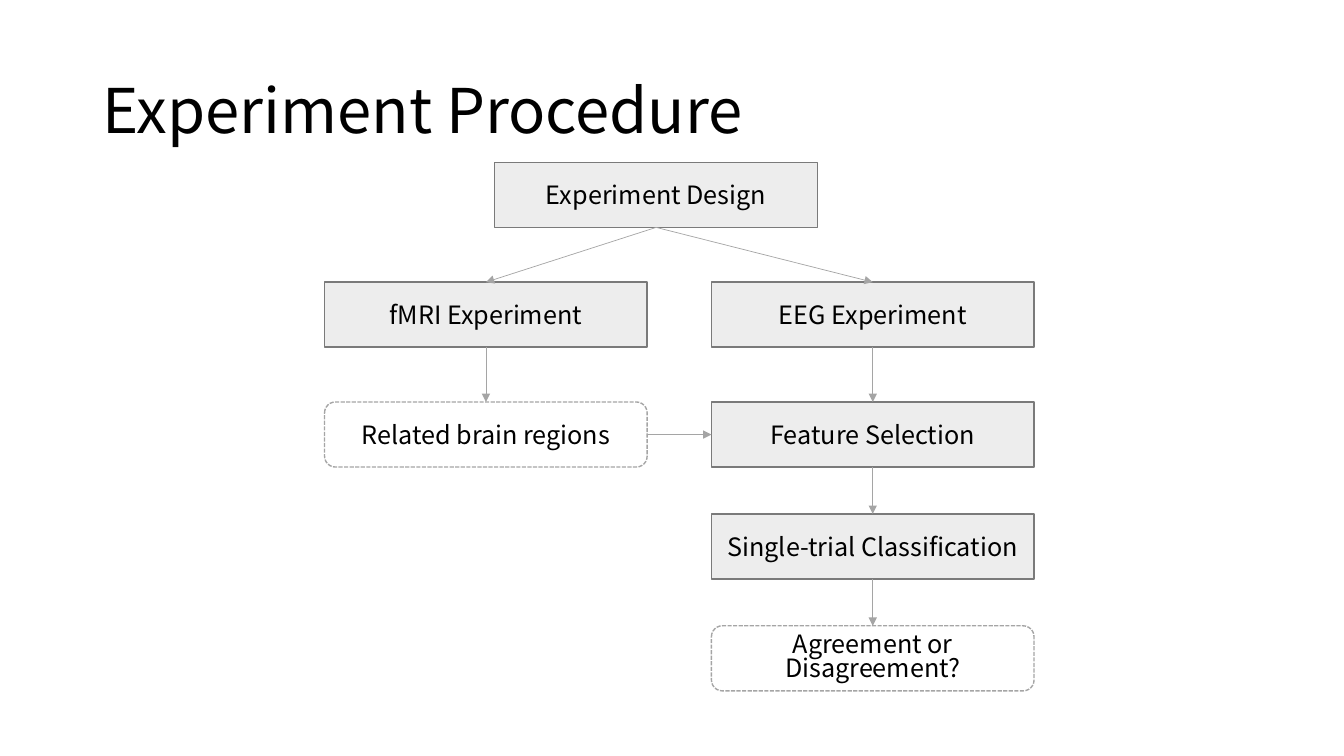
"""Build the experiment procedure flow chart slide."""
from lxml.etree import SubElement
from pptx import Presentation
from pptx.dml.color import RGBColor
from pptx.enum.dml import MSO_LINE
from pptx.enum.shapes import MSO_CONNECTOR, MSO_SHAPE
from pptx.enum.text import MSO_ANCHOR, MSO_AUTO_SIZE, PP_ALIGN
from pptx.oxml.ns import qn
from pptx.util import Cm, Pt

BLACK = RGBColor(0x00, 0x00, 0x00)
WHITE = RGBColor(0xFF, 0xFF, 0xFF)
STEP_FILL = RGBColor(0xED, 0xED, 0xED)
STEP_LINE = RGBColor(0x7A, 0x7A, 0x7A)
ARROW_GREY = RGBColor(0xA5, 0xA5, 0xA5)
FONT = "Noto Sans CJK KR"
BOX_WIDTH, BOX_HEIGHT = Cm(8.13), Cm(1.64)
DESIGN_LEFT, FMRI_LEFT, EEG_LEFT = 12.47, 8.18, 17.93
ROWS = [4.09, 7.11, 10.13, 12.95, 15.77]
TOP, LEFT, BOTTOM, RIGHT = range(4)


def add_text(frame, words, size, align, spacing):
    frame.word_wrap = True
    frame.auto_size = MSO_AUTO_SIZE.NONE
    frame.vertical_anchor = MSO_ANCHOR.MIDDLE
    paragraph = frame.paragraphs[0]
    paragraph.alignment = align
    paragraph.line_spacing = spacing
    run = paragraph.add_run()
    run.text = words
    run.font.name = FONT
    run.font.size = Pt(size)
    run.font.color.rgb = BLACK


deck = Presentation()
deck.slide_width, deck.slide_height = Cm(33.87), Cm(19.05)
slide = deck.slides.add_slide(deck.slide_layouts[5])

heading = slide.shapes.title
heading.left, heading.top = Cm(2.33), Cm(1.01)
heading.width, heading.height = Cm(29.21), Cm(3.68)
add_text(heading.text_frame, "Experiment Procedure", 44, PP_ALIGN.LEFT, 0.9)

steps = [
    ("Experiment Design", DESIGN_LEFT, 0, False, 1.0),
    ("fMRI Experiment", FMRI_LEFT, 1, False, 1.0),
    ("EEG Experiment", EEG_LEFT, 1, False, 1.0),
    ("Related brain regions", FMRI_LEFT, 2, True, 1.0),
    ("Feature Selection", EEG_LEFT, 2, False, 1.0),
    ("Single-trial Classification", EEG_LEFT, 3, False, 1.0),
    ("Agreement or Disagreement?", EEG_LEFT, 4, True, 0.8),
]
boxes = []
for words, left, row, is_result, spacing in steps:
    outline = MSO_SHAPE.ROUNDED_RECTANGLE if is_result else MSO_SHAPE.RECTANGLE
    box = slide.shapes.add_shape(outline, Cm(left), Cm(ROWS[row]), BOX_WIDTH, BOX_HEIGHT)
    box.shadow.inherit = False
    box.fill.solid()
    box.fill.fore_color.rgb = WHITE if is_result else STEP_FILL
    box.line.color.rgb = ARROW_GREY if is_result else STEP_LINE
    box.line.width = Pt(1)
    if is_result:
        box.line.dash_style = MSO_LINE.SQUARE_DOT
    add_text(box.text_frame, words, 18, PP_ALIGN.CENTER, spacing)
    boxes.append(box)

design, fmri, eeg, regions, selection, classification, agreement = boxes
flows = [
    (design, BOTTOM, fmri, TOP),
    (design, BOTTOM, eeg, TOP),
    (fmri, BOTTOM, regions, TOP),
    (eeg, BOTTOM, selection, TOP),
    (regions, RIGHT, selection, LEFT),
    (selection, BOTTOM, classification, TOP),
    (classification, BOTTOM, agreement, TOP),
]
for source, source_side, target, target_side in flows:
    arrow = slide.shapes.add_connector(MSO_CONNECTOR.STRAIGHT, 0, 0, 0, 0)
    arrow.begin_connect(source, source_side)
    arrow.end_connect(target, target_side)
    arrow.line.color.rgb = ARROW_GREY
    arrow.line.width = Pt(0.5)
    SubElement(arrow.line._get_or_add_ln(), qn("a:tailEnd"), type="triangle")
    SubElement(arrow._element.spPr, qn("a:effectLst"))

deck.save("out.pptx")
